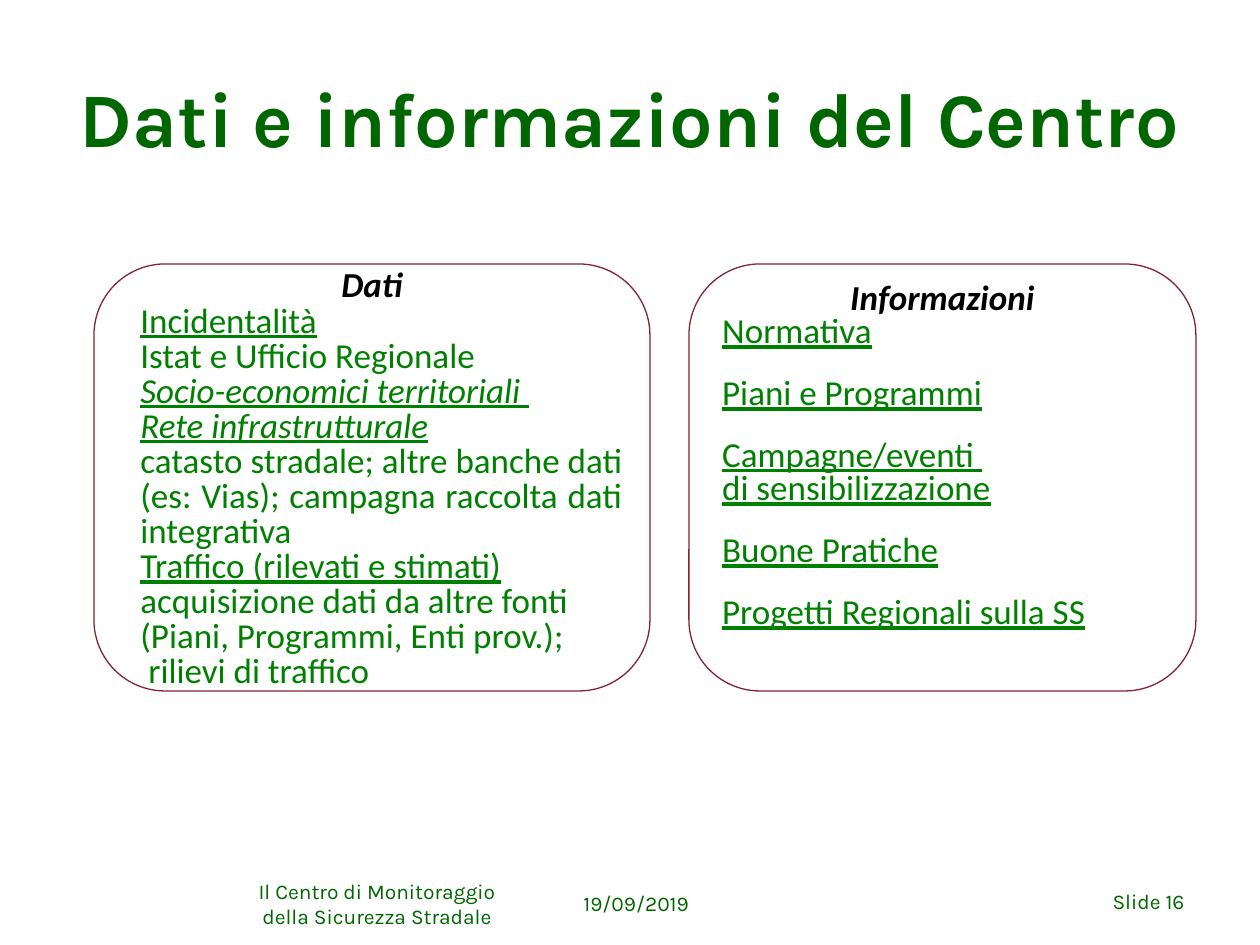
import pptx
import pptx.util
import pptx.dml.color
import pptx.enum.shapes
import pptx.enum.text

PX = 7257.15
COLORS = {"title": "006600", "item": "008000", "heading": "000000", "border": "822434"}
ALIGN = pptx.enum.text.PP_ALIGN
ANCHOR = pptx.enum.text.MSO_ANCHOR

DATA_LINES = [
    ("Incidentalità", True, False),
    ("Istat e Ufficio Regionale", False, False),
    ("Socio-economici territoriali ", True, True),
    ("Rete infrastrutturale", True, True),
    ("catasto stradale; altre banche dati (es: Vias); campagna raccolta dati integrativa", False, False),
    ("Traffico (rilevati e stimati)", True, False),
    ("acquisizione dati da altre fonti", False, False),
    ("(Piani, Programmi, Enti prov.);", False, False),
    ("rilievi di traffico", False, False),
]
INFO_LINES = [
    ("Normativa", 4),
    ("Piani e Programmi", 20.4),
    ("Campagne/eventi ", 20.4),
    ("di sensibilizzazione", 4),
    ("Buone Pratiche", 20.4),
    ("Progetti Regionali sulla SS", 20.4),
]


def px(value):
    return pptx.util.Emu(round(value * PX))


def rgb(name):
    return pptx.dml.color.RGBColor.from_string(COLORS[name])


def style(paragraph, text, face, size, color, align, spacing=None, before=0,
          bold=False, italic=False, underline=False):
    paragraph.text = text
    paragraph.alignment = align
    paragraph.space_before = pptx.util.Pt(before)
    if spacing:
        paragraph.line_spacing = pptx.util.Pt(spacing)
    font = paragraph.font
    font.name, font.size, font.color.rgb = face, pptx.util.Pt(size), rgb(color)
    font.bold, font.italic, font.underline = bold, italic, underline


def add_text_frame(slide, box, anchor=ANCHOR.TOP):
    frame = slide.shapes.add_textbox(*map(px, box)).text_frame
    frame.word_wrap = True
    frame.vertical_anchor = anchor
    return frame


def add_title(slide, box):
    title = slide.shapes.title
    title.left, title.top, title.width, title.height = map(px, box)
    title.text_frame.vertical_anchor = ANCHOR.MIDDLE
    style(title.text_frame.paragraphs[0], "Dati e informazioni del Centro",
          "Karla", 44, "title", ALIGN.CENTER, bold=True)


def add_panel(slide, box, heading, spacing):
    panel = slide.shapes.add_shape(
        pptx.enum.shapes.MSO_SHAPE.ROUNDED_RECTANGLE, *map(px, box))
    panel.shadow.inherit = False
    panel.fill.background()
    panel.line.color.rgb = rgb("border")
    panel.line.width = pptx.util.Pt(0.75)
    frame = panel.text_frame
    frame.word_wrap = True
    frame.vertical_anchor = ANCHOR.TOP
    style(frame.paragraphs[0], heading, "Calibri", 20, "heading", ALIGN.CENTER,
          spacing, bold=True, italic=True)
    return frame


def add_data_panel(slide, box):
    left, top, width, height = box
    add_panel(slide, box, "Dati", 8)
    frame = add_text_frame(slide, (left + 34, top + 35, width - 49, height - 6))
    for index, (text, underline, italic) in enumerate(DATA_LINES):
        line = frame.paragraphs[0] if index == 0 else frame.add_paragraph()
        style(line, text, "Calibri", 20, "item", ALIGN.JUSTIFY, 20,
              italic=italic, underline=underline)
    line._p.get_or_add_pPr().set("marL", str(px(8)))


def add_info_panel(slide, box):
    frame = add_panel(slide, box, "Informazioni", 15)
    for text, before in INFO_LINES:
        style(frame.add_paragraph(), text, "Calibri", 20, "item", ALIGN.JUSTIFY,
              15, before, underline=True)


def add_footer(slide, box):
    left, top, _, height = box
    parts = [
        (243, 3, 268, "Il Centro di Monitoraggio della Sicurezza Stradale", ALIGN.CENTER),
        (571, 2, 139, "19/09/2019", ALIGN.LEFT),
        (1086, 0, 111, "Slide 16", ALIGN.RIGHT),
    ]
    for x, y, width, text, align in parts:
        frame = add_text_frame(slide, (left + x, top + y, width, height), ANCHOR.MIDDLE)
        style(frame.paragraphs[0], text, "Karla", 12, "title", align)


def main():
    deck = pptx.Presentation()
    deck.slide_width, deck.slide_height = px(1260), px(945)
    slide = deck.slides.add_slide(deck.slide_layouts[5])
    add_title(slide, (63, 38, 1134, 157))
    add_data_panel(slide, (94, 264, 556, 427))
    add_info_panel(slide, (689, 264, 507, 427))
    add_footer(slide, (0, 876, 1260, 50))
    deck.save("out.pptx")


if __name__ == "__main__":
    main()
